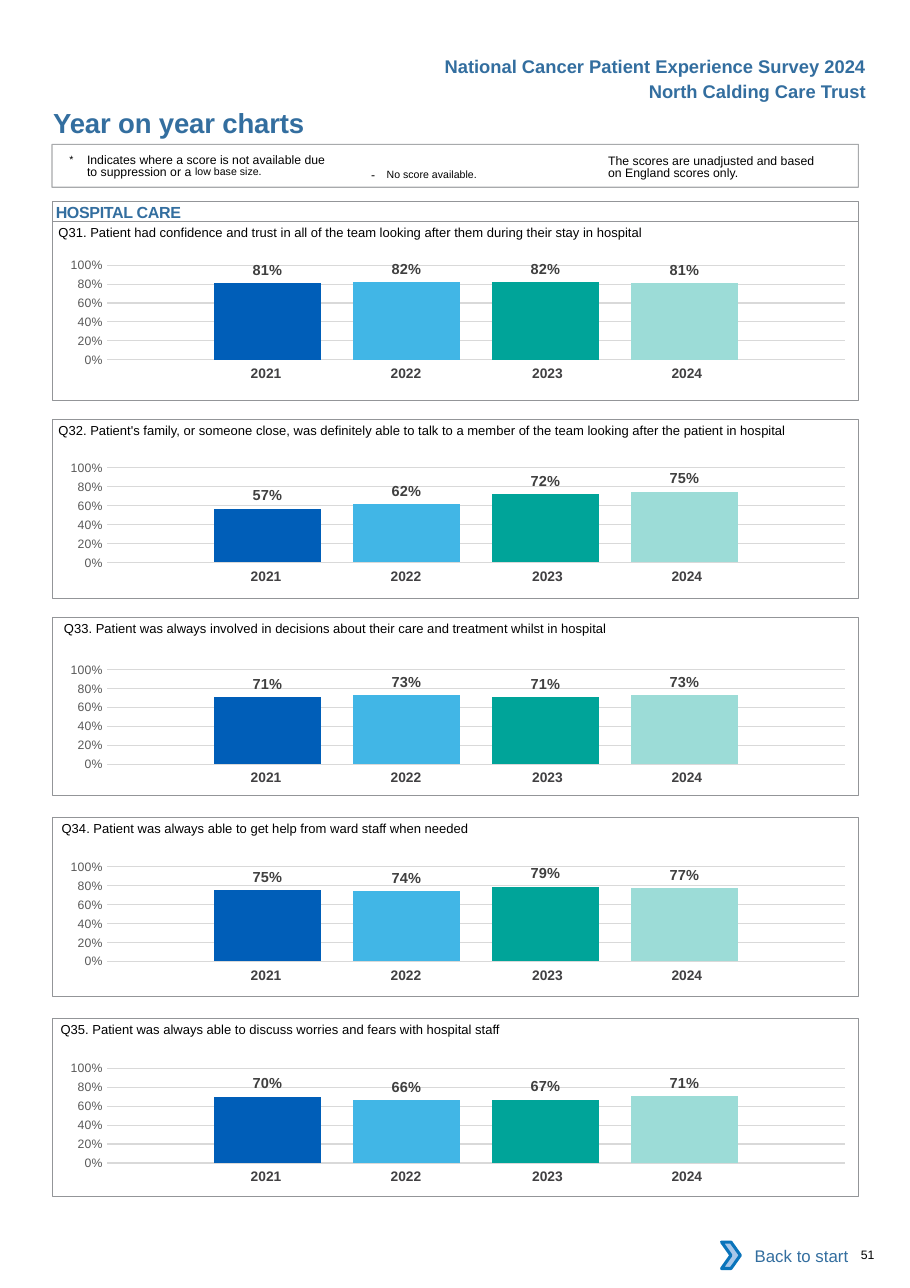
from lxml.etree import SubElement
from pptx import Presentation
from pptx.chart.data import CategoryChartData
from pptx.dml.color import RGBColor
from pptx.enum.chart import XL_CHART_TYPE, XL_LABEL_POSITION, XL_TICK_MARK
from pptx.enum.shapes import MSO_SHAPE
from pptx.enum.text import MSO_ANCHOR, MSO_AUTO_SIZE, PP_ALIGN
from pptx.oxml import parse_xml
from pptx.oxml.ns import nsdecls, qn
from pptx.util import Pt

BLACK = RGBColor(0x00, 0x00, 0x00)
WHITE = RGBColor(0xFF, 0xFF, 0xFF)
HEADING_BLUE = RGBColor(0x33, 0x6E, 0x9F)
FRAME_GREY = RGBColor(0x93, 0x95, 0x98)
YEAR_GREY = RGBColor(0x41, 0x40, 0x42)
LABEL_GREY = RGBColor(0x40, 0x40, 0x40)
AXIS_GREY = RGBColor(0x59, 0x59, 0x59)
GRID_GREY = RGBColor(0xD9, 0xD9, 0xD9)
ARROW_FILL = RGBColor(0xA8, 0xC7, 0xE9)
ARROW_LINE = RGBColor(0x0A, 0x74, 0xBB)
YEAR_COLORS = {
    "2021": RGBColor(0x00, 0x5E, 0xB8),
    "2022": RGBColor(0x41, 0xB6, 0xE6),
    "2023": RGBColor(0x00, 0xA4, 0x99),
    "2024": RGBColor(0x9C, 0xDC, 0xD7),
}
YEAR_COLUMNS = [(91.44, 0), (91.44, 0), (96.48, 2.88), (91.44, 8.64)]
NO_TABLE_STYLE = "{2D5ABB26-0587-4C30-8999-92F81FD0307C}"
PANEL_LEFT, PANEL_WIDTH, PANEL_HEIGHT = 34.3, 527, 116.64
PLOT_AREA = {"x": 0.079, "y": 0.145, "w": 0.915, "h": 0.666}

QUESTIONS = [
    ("Q31. Patient had confidence and trust in all of the team looking after them "
     "during their stay in hospital", 38.2, 144.72, 159.84, (0.81, 0.82, 0.82, 0.81)),
    ("Q32. Patient's family, or someone close, was definitely able to talk to a member "
     "of the team looking after the patient in hospital",
     38.2, 274.32, 292.32, (0.57, 0.62, 0.72, 0.75)),
    ("Q33. Patient was always involved in decisions about their care and treatment "
     "whilst in hospital", 41.8, 403.2, 424.08, (0.71, 0.73, 0.71, 0.73)),
    ("Q34. Patient was always able to get help from ward staff when needed",
     40.3, 534.24, 552.96, (0.75, 0.74, 0.79, 0.77)),
    ("Q35. Patient was always able to discuss worries and fears with hospital staff",
     39.6, 665.28, 684.72, (0.70, 0.66, 0.67, 0.71)),
]


def set_font(font, size, color, bold=False):
    """Format a font in Arial."""
    font.name, font.size, font.bold = "Arial", Pt(size), bold
    font.color.rgb = color


def write_text(frame, *spans, size=8, color=BLACK, bold=False, align=PP_ALIGN.LEFT,
               anchor=MSO_ANCHOR.TOP, insets=(0, 0, 0, 0), spacing=None, hanging=0):
    """Write one paragraph from strings or (string, run attributes) pairs."""
    frame.word_wrap, frame.auto_size = True, MSO_AUTO_SIZE.NONE
    frame.vertical_anchor = anchor
    (frame.margin_left, frame.margin_top,
     frame.margin_right, frame.margin_bottom) = map(Pt, insets)
    para = frame.paragraphs[0]
    para.alignment = align
    if spacing:
        para.line_spacing = Pt(spacing)
    if hanging:
        properties = para._p.get_or_add_pPr()
        properties.set("marL", str(Pt(hanging)))
        properties.set("indent", str(Pt(-hanging)))
    for span in spans:
        text, attributes = (span, {}) if isinstance(span, str) else span
        run = para.add_run()
        run.text = text
        set_font(run.font, size, color, bold)
        for name, value in attributes.items():
            run._r.get_or_add_rPr().set(name, str(value))


def add_label(page, left, top, width, height, *spans, **text_format):
    """Add a text box."""
    box = page.shapes.add_textbox(Pt(left), Pt(top), Pt(width), Pt(height))
    write_text(box.text_frame, *spans, **text_format)


def add_block(page, left, top, width, height, kind=MSO_SHAPE.RECTANGLE,
              fill=None, line=None, weight=0.5):
    """Add a preset shape without shadow."""
    block = page.shapes.add_shape(kind, Pt(left), Pt(top), Pt(width), Pt(height))
    block.shadow.inherit = False
    if fill is None:
        block.fill.background()
    else:
        block.fill.solid()
        block.fill.fore_color.rgb = fill
    if line is None:
        block.line.fill.background()
    else:
        block.line.color.rgb = line
        block.line.width = Pt(weight)
    return block


def add_years(page, top):
    """Add the row of years under a chart."""
    width = sum(column for column, _ in YEAR_COLUMNS)
    graphic = page.shapes.add_table(1, len(YEAR_COLUMNS), Pt(124.56), Pt(top),
                                    Pt(width), Pt(19.44))
    table = graphic.table
    table.first_row = table.horz_banding = False
    table._tbl.tblPr.find(qn("a:tableStyleId")).text = NO_TABLE_STYLE
    for index, (year, (width, right)) in enumerate(zip(YEAR_COLORS, YEAR_COLUMNS)):
        table.columns[index].width = Pt(width)
        cell = table.cell(0, index)
        cell.fill.background()
        (cell.margin_left, cell.margin_top,
         cell.margin_right, cell.margin_bottom) = map(Pt, (7.2, 3.6, right, 3.6))
        para = cell.text_frame.paragraphs[0]
        para.alignment = PP_ALIGN.CENTER
        run = para.add_run()
        run.text = year
        set_font(run.font, 9, YEAR_GREY, bold=True)


def place_plot(chart):
    """Fix the inner plot area inside the chart."""
    plot_area = chart._chartSpace.chart.plotArea
    for layout in plot_area.findall(qn("c:layout")):
        plot_area.remove(layout)
    modes = '<c:xMode val="edge"/><c:yMode val="edge"/>'
    sizes = "".join(f'<c:{name} val="{value}"/>' for name, value in PLOT_AREA.items())
    plot_area.insert(0, parse_xml(
        f'<c:layout {nsdecls("c")}><c:manualLayout><c:layoutTarget val="inner"/>'
        f"{modes}{sizes}</c:manualLayout></c:layout>"))


def add_scores(page, top, scores):
    """Add the column chart of one question's yearly scores."""
    data = CategoryChartData(number_format="0%")
    data.categories = ["1"]
    for number, score in enumerate(scores, 1):
        data.add_series(f"Series {number}", [score])
    chart = page.shapes.add_chart(XL_CHART_TYPE.COLUMN_CLUSTERED, Pt(28.4), Pt(top),
                                  Pt(PANEL_WIDTH), Pt(92.88), data).chart
    chart.has_legend = chart.has_title = False
    chart.font.name, chart.font.size, chart.font.color.rgb = "Calibri", Pt(10), BLACK
    place_plot(chart)
    chart.category_axis.visible = False
    axis = chart.value_axis
    axis.minimum_scale, axis.maximum_scale, axis.major_unit = 0, 1, 0.2
    axis.major_tick_mark = axis.minor_tick_mark = XL_TICK_MARK.NONE
    axis.tick_labels.number_format = "0%"
    axis.tick_labels.number_format_is_linked = False
    set_font(axis.tick_labels.font, 8, AXIS_GREY)
    axis.format.line.fill.background()
    axis.major_gridlines.format.line.color.rgb = GRID_GREY
    axis.major_gridlines.format.line.width = Pt(0.75)
    plot = chart.plots[0]
    plot.gap_width, plot.overlap, plot.vary_by_categories = 200, -30, False
    for series, color in zip(plot.series, YEAR_COLORS.values()):
        series.format.fill.solid()
        series.format.fill.fore_color.rgb = color
        labels = series.data_labels
        labels.show_value, labels.position = True, XL_LABEL_POSITION.OUTSIDE_END
        labels.number_format, labels.number_format_is_linked = "0%", False
        set_font(labels.font, 9.5, LABEL_GREY, bold=True)


def add_question(page, question, left, top, chart_top, scores):
    """Add a framed question with its chart and years."""
    add_years(page, chart_top + 75.8)
    add_scores(page, chart_top, scores)
    add_block(page, PANEL_LEFT, top, PANEL_WIDTH, PANEL_HEIGHT, line=FRAME_GREY)
    add_label(page, left, top + 2, 520, 14, question, size=8.5)


def add_legend(page):
    """Add the framed notes on how to read the scores."""
    add_label(page, 397.44, 99.36, 139, 20,
              "The scores are unadjusted and based on England scores only.",
              insets=(0, 2.16, 0, 0), spacing=8.1)
    add_label(page, 235.44, 101.52, 132, 17.28, ("- ", {"spc": 260}),
              ("No score available.", {"sz": 1200, "baseline": 3000}),
              insets=(7.2, 3.6, 7.2, 3.6))
    add_label(page, 45.36, 99.36, 171, 20, ("*\t", {"sz": 1200, "baseline": 3000}),
              "Indicates where a score is not available due to suppression or a ",
              ("low base size.", {"sz": 1200, "baseline": 7000}),
              insets=(0, 2.16, 0, 0), spacing=8.1, hanging=11.52)
    frame = add_block(page, 34, 94.32, PANEL_WIDTH, 28.08, line=FRAME_GREY, weight=0.75)
    color = frame.line._ln.find(".//" + qn("a:srgbClr"))
    SubElement(color, qn("a:alpha")).set("val", "80000")


def main():
    """Build the page of year on year charts."""
    deck = Presentation()
    deck.slide_width, deck.slide_height = Pt(594.72), Pt(841.68)
    page = deck.slides.add_slide(deck.slide_layouts[5])
    title = page.shapes.title
    title.left, title.top, title.width, title.height = map(Pt, (34, 69.4, 324, 21.6))
    write_text(title.text_frame, ("Year on year charts", {"spc": -10}),
               size=18, color=HEADING_BLUE, bold=True, insets=(0.72, 0, 0, 0))
    for top, heading in ((32.8, "National Cancer Patient Experience Survey 2024"),
                         (48.96, "North Calding Care Trust")):
        add_label(page, 245, top, 328.12, 21.6, heading, size=12, color=HEADING_BLUE,
                  bold=True, align=PP_ALIGN.RIGHT, insets=(7.2, 3.6, 7.2, 3.6))
    add_legend(page)
    section = add_block(page, PANEL_LEFT, 131.76, PANEL_WIDTH, 12.96, line=FRAME_GREY)
    write_text(section.text_frame, ("HOSPITAL CARE", {"spc": -20}), size=10.5,
               color=HEADING_BLUE, bold=True, insets=(2.16, 0.72, 0, 0))
    for question in QUESTIONS:
        add_question(page, *question)
    back = add_block(page, 476.64, 805.2, 84.96, 30.24, fill=WHITE)
    write_text(back.text_frame, "Back to start", size=11, color=HEADING_BLUE,
               align=PP_ALIGN.RIGHT, anchor=MSO_ANCHOR.MIDDLE, insets=(7.2, 3.6, 7.2, 3.6))
    add_block(page, 471.6, 811.7, 12.24, 17.28, MSO_SHAPE.CHEVRON,
              fill=ARROW_FILL, line=ARROW_LINE, weight=2)
    add_label(page, 555.5, 815.3, 36.72, 9.36, "51", insets=(7.2, 0, 0, 0))
    deck.save("out.pptx")


if __name__ == "__main__":
    main()
